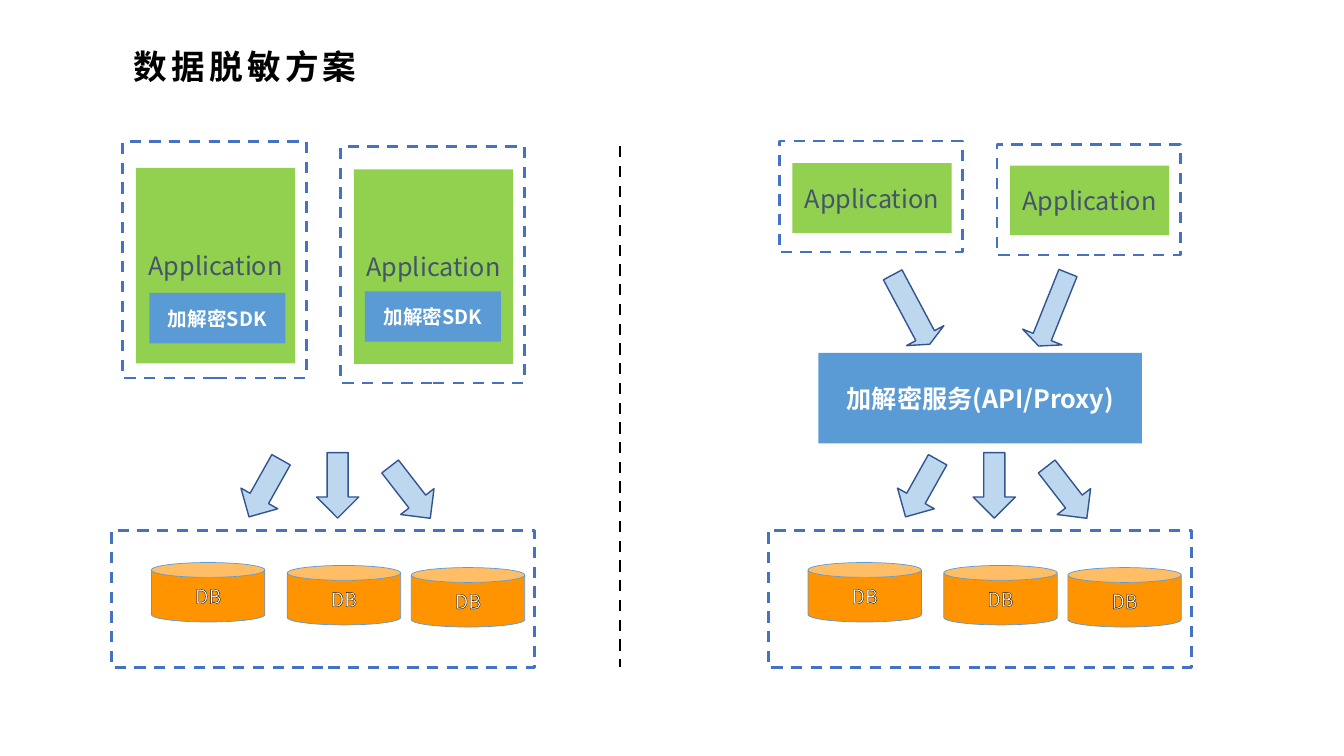
"""Builds a slide comparing SDK and service approaches to data masking."""
from lxml import etree
from pptx import Presentation
from pptx.dml.color import RGBColor
from pptx.enum.dml import MSO_LINE
from pptx.enum.shapes import MSO_CONNECTOR, MSO_SHAPE
from pptx.enum.text import MSO_ANCHOR, MSO_AUTO_SIZE, PP_ALIGN
from pptx.oxml.ns import qn
from pptx.util import Pt

RECT, CAN, ARROW = MSO_SHAPE.RECTANGLE, MSO_SHAPE.CAN, MSO_SHAPE.DOWN_ARROW
STRAIGHT = MSO_CONNECTOR.STRAIGHT
DASH = MSO_LINE.DASH
MIDDLE, CENTER = MSO_ANCHOR.MIDDLE, PP_ALIGN.CENTER
FIT_SHAPE = MSO_AUTO_SIZE.SHAPE_TO_FIT_TEXT

BLACK = RGBColor(0x00, 0x00, 0x00)
WHITE = RGBColor(0xFF, 0xFF, 0xFF)
SLATE = RGBColor(0x44, 0x54, 0x6A)
GREEN = RGBColor(0x92, 0xD0, 0x50)
ORANGE = RGBColor(0xFF, 0x93, 0x00)
BLUE = RGBColor(0x5B, 0x9B, 0xD5)
FRAME_BLUE = RGBColor(0x44, 0x72, 0xC4)
PALE_BLUE = RGBColor(0xBD, 0xD7, 0xEE)
NAVY = RGBColor(0x32, 0x54, 0x91)
FONT = "Noto Sans CJK SC"

STYLES = {
    "frame": {"kind": RECT, "fill": None, "line": (FRAME_BLUE, 2, DASH)},
    "application": {"kind": RECT, "fill": GREEN, "line": None},
    "crypto": {"kind": RECT, "fill": BLUE, "line": None},
    "database": {"kind": CAN, "fill": ORANGE, "line": (BLUE, 0.5, None)},
    "flow": {"kind": ARROW, "fill": PALE_BLUE, "line": (NAVY, 1, None)},
}
FONTS = {
    "title": {"size": Pt(24), "bold": True, "color": BLACK},
    "application": {"size": Pt(18), "bold": False, "color": SLATE},
    "service": {"size": Pt(18), "bold": True, "color": WHITE},
    "sdk": {"size": Pt(14), "bold": True, "color": WHITE},
    "database": {"size": Pt(14), "bold": False, "color": WHITE},
}


def write(frame, text, font_style):
    frame.word_wrap = True
    run = frame.paragraphs[0].add_run()
    run.text = text
    run.font.name = FONT
    for name, value in FONTS[font_style].items():
        if name == "color":
            run.font.color.rgb = value
        else:
            setattr(run.font, name, value)
    properties = run.font._element
    latin = properties.find(qn("a:latin"))
    east_asian = etree.Element(qn("a:ea"), typeface=FONT)
    latin.addnext(east_asian)
    return properties


def draw(group, style, left, top, width, height, text=None, font_style=None):
    look = STYLES[style]
    part = group.shapes.add_shape(look["kind"], Pt(left), Pt(top), Pt(width), Pt(height))
    part.shadow.inherit = False
    if look["fill"] is None:
        part.fill.background()
    else:
        part.fill.solid()
        part.fill.fore_color.rgb = look["fill"]
    if look["line"] is None:
        part.line.fill.background()
    else:
        color, weight, dash = look["line"]
        part.line.color.rgb = color
        part.line.width = Pt(weight)
        part.line.dash_style = dash
    if text:
        part.text_frame.vertical_anchor = MIDDLE
        part.text_frame.paragraphs[0].alignment = CENTER
        properties = write(part.text_frame, text, font_style)
        if font_style == "database":
            outline = etree.Element(qn("a:ln"), w=str(Pt(0.75)))
            outline_fill = etree.SubElement(outline, qn("a:solidFill"))
            etree.SubElement(outline_fill, qn("a:srgbClr"), val=str(BLACK))
            properties.insert(0, outline)
    return part


presentation = Presentation()
presentation.slide_width, presentation.slide_height = Pt(960), Pt(540)
slide = presentation.slides.add_slide(presentation.slide_layouts[6])

title = slide.shapes.add_textbox(Pt(88.6), Pt(29.5), Pt(666), Pt(36))
title.text_frame.auto_size = FIT_SHAPE
write(title.text_frame, "数据脱敏方案", "title").set("spc", "300")

divider = slide.shapes.add_connector(STRAIGHT, Pt(442.8), Pt(104.4), Pt(442.8), Pt(476.6))
divider.line.color.rgb = BLACK
divider.line.width = Pt(2)
divider.line.dash_style = DASH
etree.SubElement(divider._element.spPr, qn("a:effectLst"))

service_side = slide.shapes.add_group_shape()
sdk_side = slide.shapes.add_group_shape()

for side, offset in ((service_side, 469), (sdk_side, 0)):
    for left, top, angle in ((174.2, 325.4, 29.3), (226.1, 323.3, 0), (277.9, 328.3, 322.2)):
        draw(side, "flow", left + offset, top, 30.2, 46.8).rotation = angle
    draw(side, "frame", 79.7 + offset, 378.7, 302.4, 98)
    for left, top in ((108.2, 401.8), (205.2, 403.9), (293.8, 405.4)):
        draw(side, "database", left + offset, top, 81, 42.5, "DB", "database")

for left, top, angle, shaft in ((635.8, 193, 331.9, 0.5), (737.3, 193, 21.9, 0.46)):
    request = draw(service_side, "flow", left, top, 30.2, 56.2)
    request.rotation = angle
    request.adjustments[0] = shaft
    request.adjustments[1] = 0.23
draw(service_side, "crypto", 584.6, 252, 231.1, 64.8, "加解密服务(API/Proxy)", "service")

APPLICATIONS = (
    (service_side, 556.6, 100.8, 79.2, 116.6, 49.7),
    (service_side, 712.1, 103, 79.2, 118.3, 49.7),
    (sdk_side, 87.8, 100.8, 169.2, 120, 139.7),
    (sdk_side, 243.4, 104.4, 169.2, 121, 139),
)
for side, left, top, height, inner_top, inner_height in APPLICATIONS:
    draw(side, "frame", left, top, 131, height)
    draw(side, "application", left + 9.3, inner_top, 113.8, inner_height,
         "Application", "application")

for left, top in ((106.6, 209.3), (260.6, 208.1)):
    draw(sdk_side, "crypto", left, top, 97.2, 36, "加解密SDK", "sdk")

presentation.save("out.pptx")
